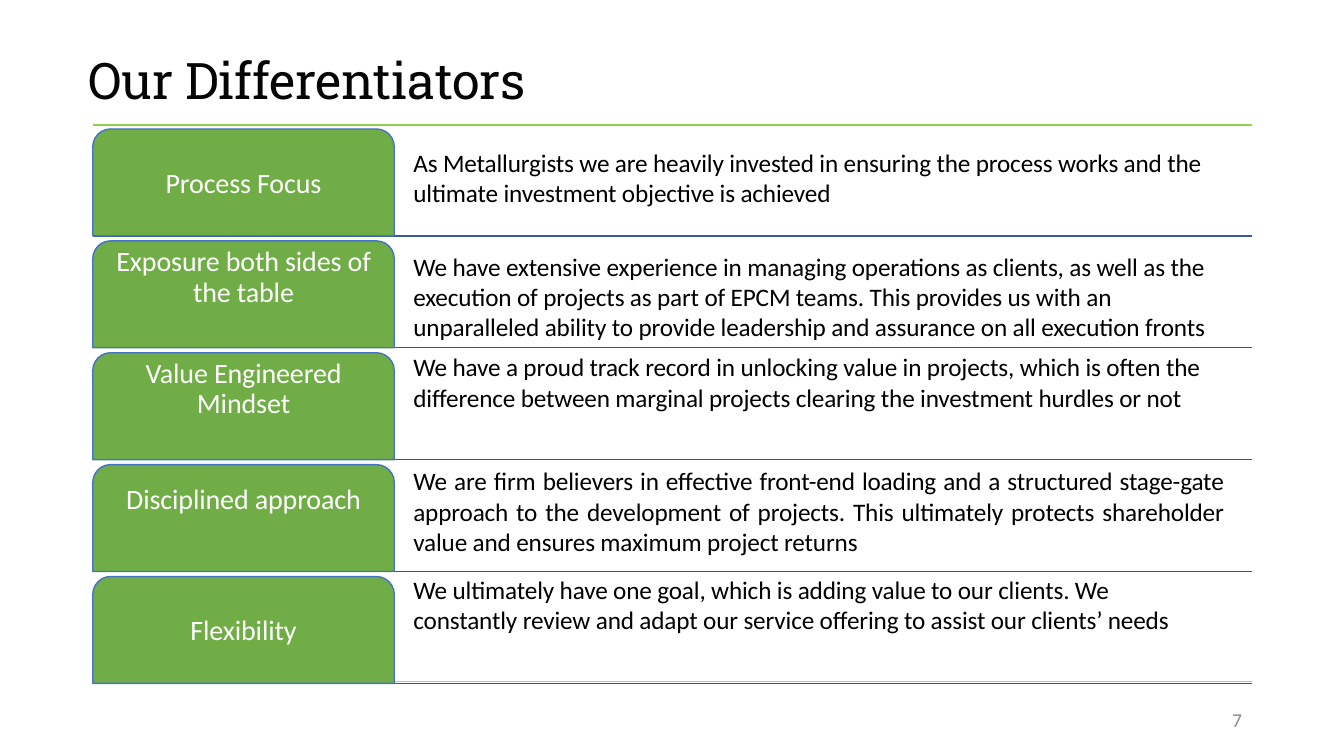
"""Build the slide on five differentiators, each a green tab with its text."""
from lxml import etree
from pptx import Presentation
from pptx.dml.color import RGBColor
from pptx.enum.shapes import MSO_CONNECTOR, MSO_SHAPE
from pptx.enum.text import MSO_ANCHOR, MSO_AUTO_SIZE, PP_ALIGN
from pptx.oxml.ns import qn
from pptx.util import Inches, Pt

LEFT, CENTER, JUSTIFY = PP_ALIGN.LEFT, PP_ALIGN.CENTER, PP_ALIGN.JUSTIFY
TOP, NONE = MSO_ANCHOR.TOP, MSO_AUTO_SIZE.NONE
STRAIGHT, TAB = MSO_CONNECTOR.STRAIGHT, MSO_SHAPE.ROUND_2_SAME_RECTANGLE

TITLE = "Our Differentiators"
PAGE = "7"
ROWS = [
    {"label": "Process Focus", "drop": 0.36, "lead": None,
     "text": "As Metallurgists we are heavily invested in ensuring the process "
             "works and the ultimate investment objective is achieved",
     "box": (1.46, 7.98, 0.63), "align": LEFT},
    {"label": "Exposure both sides of the table", "drop": 0.05, "lead": Pt(22),
     "text": "We have extensive experience in managing operations as clients, "
             "as well as the execution of projects as part of EPCM teams. This "
             "provides us with an unparalleled ability to provide leadership "
             "and assurance on all execution fronts",
     "box": (2.49, 8.02, 0.93), "align": LEFT},
    {"label": "Value Engineered Mindset", "drop": 0.02, "lead": Pt(22),
     "text": "We have a proud track record in unlocking value in projects, "
             "which is often the difference between marginal projects clearing "
             "the investment hurdles or not",
     "box": (3.49, 7.97, 0.63), "align": LEFT},
    {"label": "Disciplined approach", "drop": 0.17, "lead": None,
     "text": "We are firm believers in effective front-end loading and a "
             "structured stage-gate approach to the development of projects. "
             "This ultimately protects shareholder value and ensures maximum "
             "project returns",
     "box": (4.62, 8.04, 0.93), "align": JUSTIFY},
    {"label": "Flexibility", "drop": 0.35, "lead": None,
     "text": "We ultimately have one goal, which is adding value to our "
             "clients. We constantly review and adapt our service offering to "
             "assist our clients’ needs",
     "box": (5.7, 7.65, 0.63), "align": LEFT},
]
COLORS = {"title": "050505", "body": "000000", "label": "FFFFFF",
          "page": "8A8A8A", "tab": "70AD47", "edge": "4472C4",
          "rule": "34599C", "top": "92D050", "foot": "C0C0C0"}
FONTS = {
    "title": {"name": "Roboto Slab", "size": Pt(36), "bold": False},
    "label": {"name": "Calibri", "size": Pt(20)},
    "body": {"name": "Calibri", "size": Pt(18)},
    "page": {"name": "Calibri", "size": Pt(14)},
}
X, WIDE, TAB_W, TAB_H = 0.92, 11.5, 2.99, 1.06
Y, STEP, BODY_X = 1.28, 1.11, 4.1
CURVE = 0.05
TRACK = "-10"


def paint(name):
    """Return the named colour."""
    return RGBColor.from_string(COLORS[name])


def write(shape, text, style, align=LEFT, lead=None, side=0, drop=0):
    """Set the text of a shape in one of the named styles."""
    frame = shape.text_frame
    form = {"word_wrap": True, "auto_size": NONE, "vertical_anchor": TOP,
            "margin_left": Inches(side), "margin_right": Inches(side),
            "margin_top": Inches(drop), "margin_bottom": 0}
    for key, value in form.items():
        setattr(frame, key, value)
    para = frame.paragraphs[0]
    para.alignment, para.line_spacing = align, lead
    run = para.add_run()
    run.text = text
    for key, value in FONTS[style].items():
        setattr(run.font, key, value)
    run.font.color.rgb = paint(style)
    run.font._element.set("spc", TRACK)


def rule(slide, y, name):
    """Draw a rule across the slide."""
    line = slide.shapes.add_connector(
        STRAIGHT, Inches(X), Inches(y), Inches(X + WIDE), Inches(y))
    line.line.color.rgb = paint(name)
    line.line.width = Pt(1)
    etree.SubElement(line._element.spPr, qn("a:effectLst"))


def add_box(slide, x, y, w, h):
    """Add a text box measured in inches."""
    return slide.shapes.add_textbox(Inches(x), Inches(y), Inches(w), Inches(h))


def add_row(slide, y, row):
    """Add a tab with its label, and the text beside it."""
    tab = slide.shapes.add_shape(
        TAB, Inches(X), Inches(y), Inches(TAB_W), Inches(TAB_H))
    tab.shadow.inherit = False
    tab.fill.solid()
    tab.fill.fore_color.rgb = paint("tab")
    tab.line.color.rgb = paint("edge")
    tab.line.width = Pt(1)
    write(tab, row["label"], "label", CENTER, row["lead"], 0.12,
          max(0, row["drop"] - CURVE))
    top, wide, high = row["box"]
    write(add_box(slide, BODY_X, top, wide, high), row["text"], "body",
          row["align"])


def main():
    """Build and save the slide."""
    deck = Presentation()
    deck.slide_width, deck.slide_height = Inches(13.33), Inches(7.5)
    slide = deck.slides.add_slide(deck.slide_layouts[5])
    title = slide.shapes.title
    title.left, title.top = Inches(0.88), Inches(0.49)
    title.width, title.height = Inches(4.67), Inches(0.63)
    write(title, TITLE, "title")
    rule(slide, 1.24, "top")
    rule(slide, 6.76, "foot")
    tops = [Y + STEP * i for i in range(len(ROWS))]
    for y in tops:
        rule(slide, y + TAB_H, "rule")
    for y, row in zip(tops, ROWS):
        add_row(slide, y, row)
    write(add_box(slide, 12.22, 7.06, 0.15, 0.22), PAGE, "page",
          lead=Pt(14.3))
    deck.save("out.pptx")


if __name__ == "__main__":
    main()
